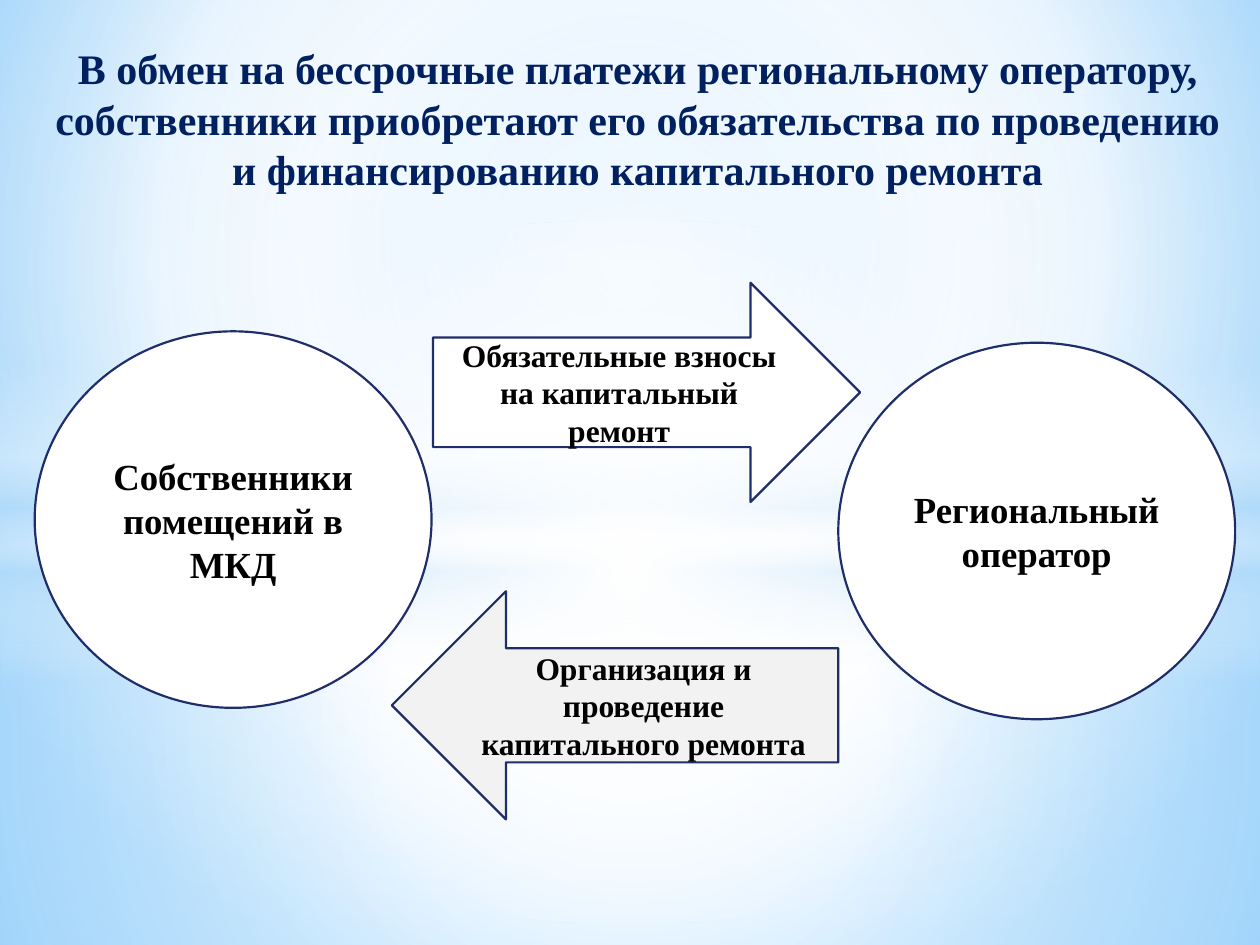
from lxml.etree import SubElement
from pptx import Presentation
from pptx.dml.color import RGBColor
from pptx.enum.shapes import MSO_SHAPE
from pptx.enum.text import MSO_ANCHOR, PP_ALIGN
from pptx.oxml.ns import qn
from pptx.util import Cm, Pt

WHITE = RGBColor(0xFF, 0xFF, 0xFF)
BLACK = RGBColor(0x00, 0x00, 0x00)
GREY = RGBColor(0xF2, 0xF2, 0xF2)
NAVY = RGBColor(0x00, 0x20, 0x60)
OUTLINE = RGBColor(0x1F, 0x2E, 0x69)
SKY = RGBColor(0x9E, 0xD5, 0xFF)
PALE = RGBColor(0xB4, 0xDC, 0xFA)
AZURE = RGBColor(0x5B, 0xB9, 0xFF)

WIDTH, HEIGHT = 25.4, 19.05
CENTRE = (50, 50, 50, 50)
TITLE = ("В обмен на бессрочные платежи региональному оператору, "
         "собственники приобретают его обязательства по проведению "
         "и финансированию капитального ремонта")


def set_gradient(parent, stops, focus=None):
    solid = parent.find(qn("a:solidFill"))
    gradient = parent.makeelement(qn("a:gradFill"), {"rotWithShape": "1"})
    parent.replace(solid, gradient)
    stop_list = SubElement(gradient, qn("a:gsLst"))
    for position, color, opacity in stops:
        stop = SubElement(stop_list, qn("a:gs"), pos=str(position * 1000))
        tint = SubElement(stop, qn("a:srgbClr"), val=str(color))
        if opacity < 100:
            SubElement(tint, qn("a:alpha"), val=str(opacity * 1000))
    if focus:
        circle = SubElement(gradient, qn("a:path"), path="circle")
        edges = {side: str(value * 1000) for side, value in zip("ltrb", focus)}
        SubElement(circle, qn("a:fillToRect"), edges)
    else:
        SubElement(gradient, qn("a:lin"), ang="5400000", scaled="0")


def add_plain_shape(page, kind, box, color):
    shape = page.shapes.add_shape(kind, *map(Cm, box))
    shape.shadow.inherit = False
    shape.fill.solid()
    shape.fill.fore_color.rgb = color
    return shape


def write_text(frame, text, size, color, anchor):
    for name, value in {"word_wrap": True, "vertical_anchor": anchor}.items():
        setattr(frame, name, value)
    para = frame.paragraphs[0]
    para.alignment = PP_ALIGN.CENTER
    span = para.add_run()
    span.text = text
    span.font.color.rgb = color
    looks = {"name": "Times New Roman", "size": Pt(size), "bold": True}
    for name, value in looks.items():
        setattr(span.font, name, value)
    return para


def add_backdrop(page, box):
    left, top, width, height = box
    page.background.fill.solid()
    page.background.fill.fore_color.rgb = SKY
    set_gradient(page.element.find(".//" + qn("p:bgPr")),
                 [(0, SKY, 100), (60, WHITE, 100), (100, AZURE, 100)],
                 (20, 10, 20, 60))
    horizon = 10.74
    band = [(0, WHITE, 0), (29, WHITE, 30), (45, PALE, 40),
            (55, WHITE, 26), (65, PALE, 60), (100, WHITE, 0)]
    layers = [
        (MSO_SHAPE.RECTANGLE, horizon, height - horizon,
         [(0, WHITE, 91), (37, WHITE, 76), (100, PALE, 79)], CENTRE),
        (MSO_SHAPE.RECTANGLE, 0, horizon,
         [(0, WHITE, 89), (48, WHITE, 62), (100, PALE, 79)], CENTRE),
        (MSO_SHAPE.RECTANGLE, 7.37, 6.35, band, None),
        (MSO_SHAPE.OVAL, 4.45, 14.17,
         [(0, WHITE, 100), (54, WHITE, 0)], CENTRE),
    ]
    for kind, offset, depth, stops, focus in layers:
        layer = add_plain_shape(page, kind, (left, top + offset, width, depth), WHITE)
        layer.line.fill.background()
        set_gradient(layer.element.spPr, stops, focus)


def add_title(page, box):
    title = page.shapes.add_textbox(*map(Cm, box))
    para = write_text(title.text_frame, TITLE, 24, NAVY, MSO_ANCHOR.TOP)
    properties = para._p.get_or_add_pPr()
    for name, value in {"marL": Cm(0.5), "indent": 0}.items():
        properties.set(name, str(value))


def add_exchange(page, box):
    left, top, width, height = box
    circle_size = (8.0, 7.59)
    right = width - circle_size[0]
    parts = [
        (MSO_SHAPE.OVAL, (0, 0.98), circle_size, WHITE, 21,
         "Собственники помещений в МКД"),
        (MSO_SHAPE.OVAL, (right, 1.21), circle_size, WHITE, 21,
         "Региональный оператор"),
        (MSO_SHAPE.RIGHT_ARROW, (8.03, 0), (8.61, 4.42), WHITE, 18,
         "Обязательные взносы на капитальный ремонт"),
        (MSO_SHAPE.LEFT_ARROW, (7.2, height - 4.6), (9.0, 4.6), GREY, 18,
         "Организация и проведение капитального ремонта"),
    ]
    for kind, (x, y), size, color, text_size, text in parts:
        shape = add_plain_shape(page, kind, (left + x, top + y, *size), color)
        shape.line.color.rgb = OUTLINE
        shape.line.width = Pt(1.25)
        write_text(shape.text_frame, text, text_size, BLACK, MSO_ANCHOR.MIDDLE)


def main():
    deck = Presentation()
    for name, value in {"slide_width": WIDTH, "slide_height": HEIGHT}.items():
        setattr(deck, name, Cm(value))
    page = deck.slides.add_slide(deck.slide_layouts[6])
    add_backdrop(page, (0, 0, WIDTH, HEIGHT))
    add_title(page, (0.3, 0.74, 24.61, 2.0))
    add_exchange(page, (0.7, 5.7, 24.2, 10.82))
    deck.save("out.pptx")


if __name__ == "__main__":
    main()
